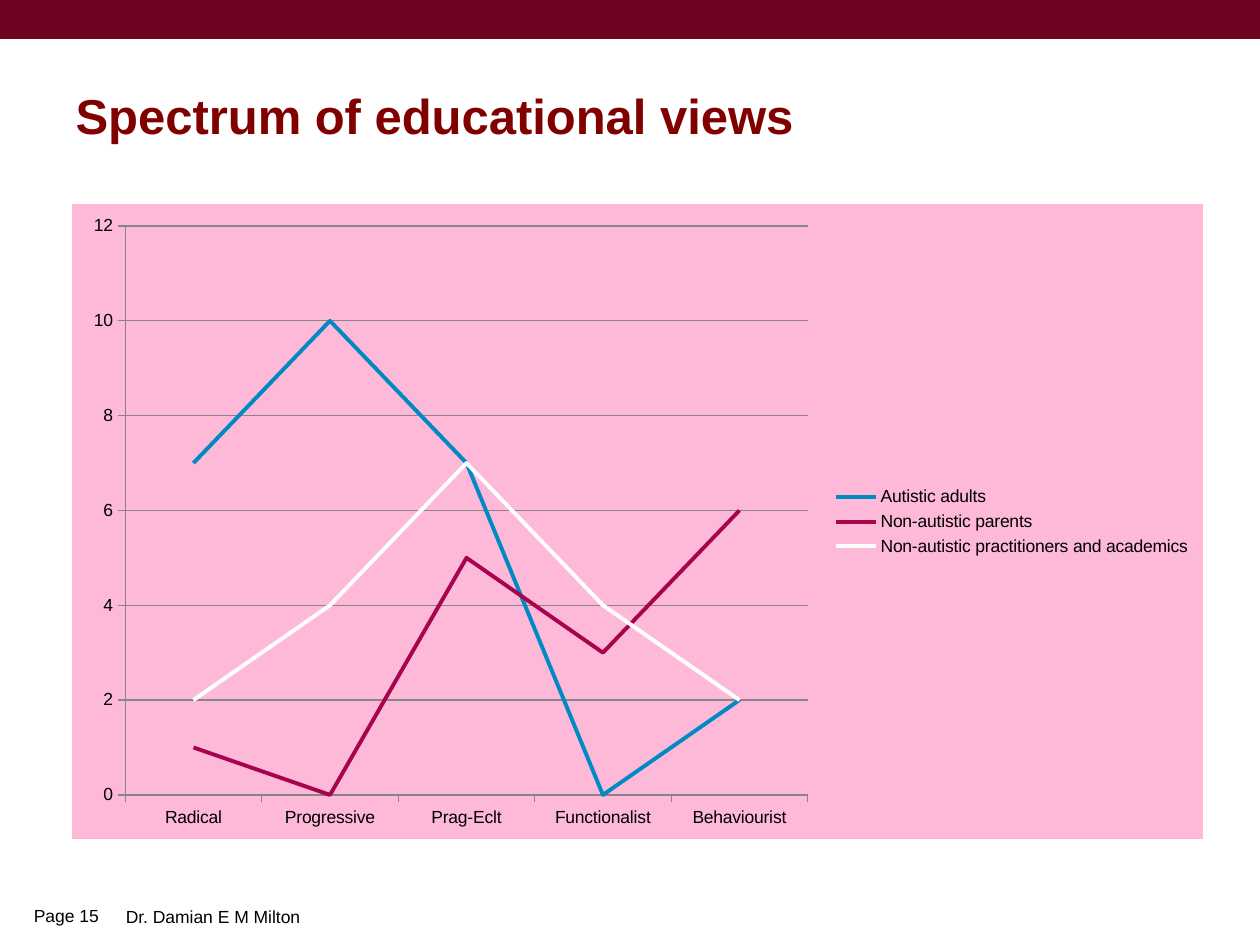
from lxml import etree
from pptx import Presentation
from pptx import util as u
from pptx.chart.data import CategoryChartData
from pptx.dml.color import RGBColor
from pptx.enum import chart as charts, shapes, text
from pptx.oxml import parse_xml
from pptx.oxml.ns import nsdecls, qn

Inches = u.Inches


def color(value):
    return RGBColor.from_string(value)


def write(frame, words, size, hue, bold, anchor):
    frame.word_wrap = True
    frame.auto_size = text.MSO_AUTO_SIZE.NONE
    frame.vertical_anchor = anchor
    para = frame.paragraphs[0]
    para.alignment = text.PP_ALIGN.LEFT
    span = para.add_run()
    span.text = words
    for name, value in {"name": "Arial", "size": u.Pt(size), "bold": bold}.items():
        setattr(span.font, name, value)
    span.font.color.rgb = color(hue)


deck = Presentation()
deck.slide_width, deck.slide_height = Inches(10), Inches(7.5)
page = deck.slides.add_slide(deck.slide_layouts[5])

# Top band
band = page.shapes.add_shape(shapes.MSO_SHAPE.RECTANGLE, 0, 0, Inches(10), Inches(0.31))
band.shadow.inherit = False
band.fill.solid()
band.fill.fore_color.rgb = color("6C0421")
band.line.fill.background()

# Title
title = page.shapes.title
places = {"left": 0.5, "top": 0.6, "width": 9.07, "height": 0.63}
for name, value in places.items():
    setattr(title, name, Inches(value))
write(title.text_frame, "Spectrum of educational views", 28, "800000", True,
      text.MSO_ANCHOR.MIDDLE)

# Footer
footers = [
    ("Page 15", (0.17, 7.12, 0.74, 0.29), text.MSO_ANCHOR.MIDDLE),
    ("Dr. Damian E M Milton", (0.9, 7.14, 7.1, 0.27), text.MSO_ANCHOR.TOP),
]
for words, place, anchor in footers:
    box = page.shapes.add_textbox(*map(Inches, place))
    write(box.text_frame, words, 10, "000000", False, anchor)

# Line chart
views = [
    ("Autistic adults", (7, 10, 7, 0, 2), "008AC4"),
    ("Non-autistic parents", (1, 0, 5, 3, 6), "A8034F"),
    ("Non-autistic practitioners and academics", (2, 4, 7, 4, 2), "FFFFFF"),
]
data = CategoryChartData()
data.categories = ["Radical", "Progressive", "Prag-Eclt", "Functionalist", "Behaviourist"]
for name, values, _ in views:
    data.add_series(name, values)
chart = page.shapes.add_chart(charts.XL_CHART_TYPE.LINE, Inches(0.56), Inches(1.61),
                              Inches(9), Inches(5.06), data).chart
chart.has_title = False
chart.font.name, chart.font.size = "Arial", u.Pt(10)
chart.font.color.rgb = color("000000")
chart.has_legend = True
chart.legend.position = charts.XL_LEGEND_POSITION.RIGHT
chart.legend.include_in_layout = False

plot = chart.plots[0]
plot.vary_by_categories = False
for series, (_, _, hue) in zip(plot.series, views):
    series.smooth = False
    series.marker.style = charts.XL_MARKER_STYLE.NONE
    series.format.line.width = u.Pt(2.25)
    series.format.line.color.rgb = color(hue)

# Axes and gridlines
values_axis = chart.value_axis
values_axis.minimum_scale, values_axis.maximum_scale, values_axis.major_unit = 0, 12, 2
values_axis.has_major_gridlines = True
for axis in (chart.category_axis, values_axis):
    axis.major_tick_mark = charts.XL_TICK_MARK.OUTSIDE
    axis.format.line.color.rgb = color("868686")
grid = values_axis.major_gridlines.format.line
grid.color.rgb = color("868686")
grid.width = u.Pt(0.75)

# Chart background and border
backdrop = parse_xml(f"<c:spPr {nsdecls('c', 'a')}/>")
fill = etree.SubElement(backdrop, qn("a:solidFill"))
etree.SubElement(fill, qn("a:srgbClr"), val="FEB9D9")
border = etree.SubElement(backdrop, qn("a:ln"), w=str(u.Pt(0.75)))
fill = etree.SubElement(border, qn("a:solidFill"))
etree.SubElement(fill, qn("a:srgbClr"), val="FFFFFF")
chart.element.find(qn("c:chart")).addnext(backdrop)

deck.save("out.pptx")
